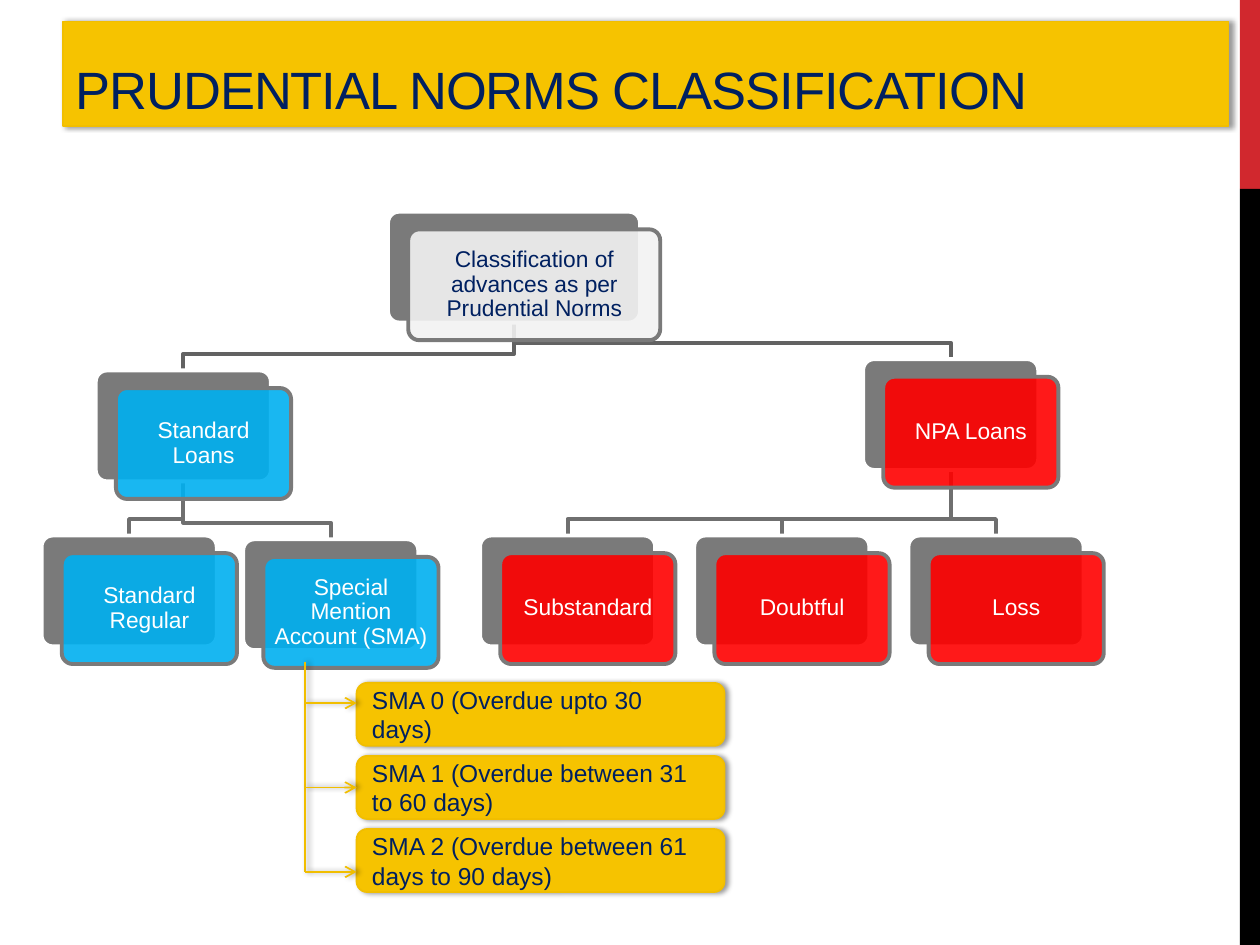
from lxml.etree import SubElement
from pptx import Presentation
from pptx.dml.color import RGBColor
from pptx.enum.shapes import MSO_CONNECTOR as CONNECTOR, MSO_SHAPE as SHAPE
from pptx.enum.text import MSO_ANCHOR as ANCHOR, MSO_AUTO_SIZE as AUTO_SIZE, PP_ALIGN as ALIGN
from pptx.oxml.ns import qn
from pptx.util import Inches, Pt

NAVY, WHITE, GREY = "002060", "FFFFFF", "7A7A7A"
GOLD, GOLD_LINE = "F6C300", "F1BE00"
BLUE, RED, PALE = "00B0F0", "FF0000", "F2F2F2"
CARD_WIDTH, CARD_HEIGHT = 1.39, 0.88

CARDS = {
    "Classification of advances as per Prudential Norms": (3.08, 1.68, 2, PALE, NAVY),
    "Standard Loans": (0.76, 2.94, CARD_WIDTH, BLUE, WHITE),
    "Standard Regular": (0.33, 4.25, CARD_WIDTH, BLUE, WHITE),
    "Special Mention Account (SMA)": (1.93, 4.28, CARD_WIDTH, BLUE, WHITE),
    "NPA Loans": (6.85, 2.85, CARD_WIDTH, RED, WHITE),
    "Substandard": (3.81, 4.25, CARD_WIDTH, RED, WHITE),
    "Doubtful": (5.51, 4.25, CARD_WIDTH, RED, WHITE),
    "Loss": (7.21, 4.25, CARD_WIDTH, RED, WHITE),
}
ROOT = next(iter(CARDS))
BRANCHES = [
    ("NPA Loans", ["Loss", "Doubtful", "Substandard"], "6F6F6F"),
    (ROOT, ["NPA Loans"], "626262"),
    ("Standard Loans", ["Special Mention Account (SMA)", "Standard Regular"], "6F6F6F"),
    (ROOT, ["Standard Loans"], "626262"),
]
SMA_LEVELS = [
    "SMA 0 (Overdue upto 30 days)",
    "SMA 1 (Overdue between 31 to 60 days)",
    "SMA 2 (Overdue between 61 days to 90 days)",
]


def color(value):
    """Turn a hex string into a colour."""
    return RGBColor.from_string(value)


class SlideBuilder:
    """Hold the style and the current slide, and draw each kind of element."""

    font_name = "Arial"

    def __init__(self, slide):
        """Keep the slide to draw on."""
        self.slide = slide

    def paint(self, shape, fill, line=None, width=1.0, alpha=None):
        """Set the fill and outline of a shape."""
        shape.fill.solid()
        shape.fill.fore_color.rgb = color(fill)
        if alpha:
            solid = shape._element.spPr.find(qn("a:solidFill"))
            SubElement(solid[0], qn("a:alpha"), val=str(alpha * 1000))
        if line:
            shape.line.color.rgb = color(line)
            shape.line.width = Pt(width)
        else:
            shape.line.fill.background()

    def effects(self, shape, shadow=False):
        """Replace the theme effects with none or with a soft shadow."""
        effect_list = SubElement(shape._element.spPr, qn("a:effectLst"))
        if shadow:
            outer = SubElement(effect_list, qn("a:outerShdw"), blurRad=str(Pt(3.1)),
                               dist=str(Pt(1.8)), dir="0", rotWithShape="0")
            black = SubElement(outer, qn("a:srgbClr"), val="000000")
            SubElement(black, qn("a:alpha"), val="40000")

    def label(self, shape, text, size, font_color, align=ALIGN.LEFT, anchor=ANCHOR.MIDDLE):
        """Put one styled paragraph into a shape and return it."""
        frame = shape.text_frame
        frame.word_wrap = True
        frame.auto_size = AUTO_SIZE.NONE
        frame.vertical_anchor = anchor
        paragraph = frame.paragraphs[0]
        paragraph.text = text
        paragraph.alignment = align
        paragraph.font.name = self.font_name
        paragraph.font.size = Pt(size)
        paragraph.font.color.rgb = color(font_color)
        return paragraph

    def box(self, kind, left, top, width, height, fill, line=None, line_width=1.0,
            alpha=None, shadow=False):
        """Draw a preset shape."""
        shape = self.slide.shapes.add_shape(
            kind, Inches(left), Inches(top), Inches(width), Inches(height))
        self.paint(shape, fill, line, line_width, alpha)
        self.effects(shape, shadow)
        return shape

    def title(self, text):
        """Format the title placeholder as a banner."""
        title = self.slide.shapes.title
        title.left, title.top = Inches(0.5), Inches(0.17)
        title.width, title.height = Inches(9.25), Inches(0.83)
        self.paint(title, GOLD, GOLD_LINE)
        self.effects(title, shadow=True)
        paragraph = self.label(title, text, 30, NAVY, anchor=ANCHOR.BOTTOM)
        paragraph.runs[0]._r.get_or_add_rPr().set("spc", "-60")

    def card(self, text, left, top, width, fill, font_color):
        """Draw a grey card with a translucent labelled card in front."""
        for shift_x, shift_y, back in ((0, 0, True), (0.16, 0.14, False)):
            card = self.box(SHAPE.ROUNDED_RECTANGLE, left + shift_x, top + shift_y, width,
                            CARD_HEIGHT, GREY if back else fill, WHITE if back else GREY,
                            2.25, None if back else 90)
            card.adjustments[0] = 0.1
        frame = card.text_frame
        frame.margin_left = frame.margin_right = Inches(0.05)
        frame.margin_top = frame.margin_bottom = Inches(0.05)
        self.label(card, text, 13, font_color, ALIGN.CENTER).line_spacing = 0.9

    def branch(self, parent, child, line):
        """Draw the bent line from a parent card to a child card."""
        start_x, start_y = parent[0] + parent[2] / 2, parent[1] + CARD_HEIGHT
        end_x, end_y = child[0] + child[2] / 2, child[1]
        bend_y = end_y - 0.13
        points = [(start_x, bend_y), (end_x, bend_y), (end_x, end_y)]
        builder = self.slide.shapes.build_freeform(Inches(start_x), Inches(start_y))
        builder.add_line_segments([(Inches(x), Inches(y)) for x, y in points], close=False)
        shape = builder.convert_to_shape()
        shape.fill.background()
        shape.line.color.rgb = color(line)
        shape.line.width = Pt(2.25)
        self.effects(shape)

    def line(self, start, end, arrow=False):
        """Draw a straight gold line, with an arrowhead if asked."""
        connector = self.slide.shapes.add_connector(
            CONNECTOR.STRAIGHT, *(Inches(value) for value in (*start, *end)))
        connector.line.color.rgb = color(GOLD_LINE)
        connector.line.width = Pt(1)
        if arrow:
            outline = connector._element.spPr.find(qn("a:ln"))
            SubElement(outline, qn("a:tailEnd"), type="arrow")
        self.effects(connector, shadow=True)
        return connector


def main():
    """Build the slide and save it."""
    presentation = Presentation()
    presentation.slide_width, presentation.slide_height = Inches(10), Inches(7.5)
    slide = presentation.slides.add_slide(presentation.slide_layouts[5])
    builder = SlideBuilder(slide)

    builder.box(SHAPE.RECTANGLE, 9.84, 0, 0.16, 1.5, "D1282E")
    builder.box(SHAPE.RECTANGLE, 9.84, 1.5, 0.16, 6, "000000")
    builder.title("PRUDENTIAL NORMS CLASSIFICATION")

    for parent, children, line in BRANCHES:
        for child in children:
            builder.branch(CARDS[parent], CARDS[child], line)
    for text, card in CARDS.items():
        builder.card(text, *card)

    trunk_x, level_left = 2.42, 2.83
    builder.line((trunk_x, 5.25), (trunk_x, 6.92))
    for index, text in enumerate(SMA_LEVELS):
        level = builder.box(SHAPE.ROUNDED_RECTANGLE, level_left, 5.42 + index * 0.58,
                            2.92, 0.5, GOLD, GOLD_LINE, shadow=True)
        builder.label(level, text, 14, NAVY)
        arrow_y = 6.25 + (index - 1) * 0.67
        arrow = builder.line((trunk_x, arrow_y), (level_left, arrow_y), arrow=True)
        if index == 1:
            arrow.end_connect(level, 1)

    presentation.save("out.pptx")


if __name__ == "__main__":
    main()
